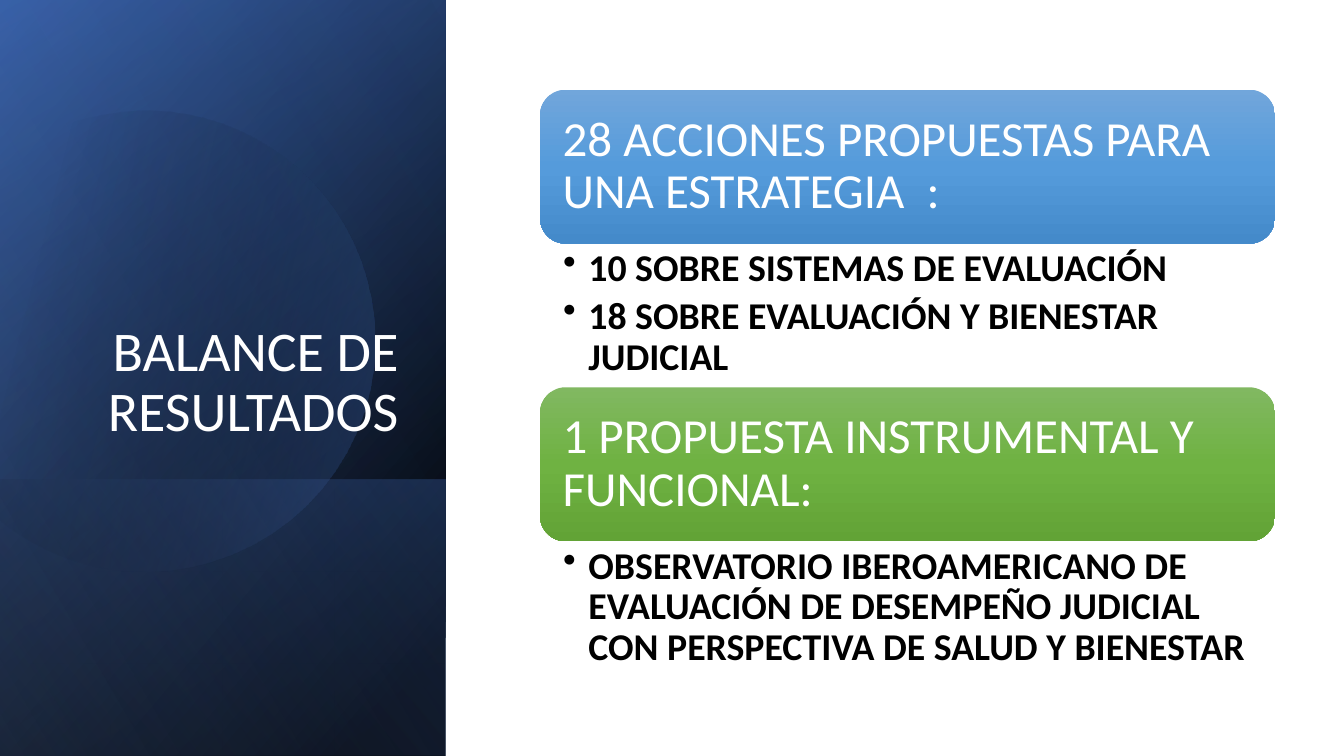
import math

import pptx
import pptx.dml.color
import pptx.enum.shapes
import pptx.enum.text
import pptx.util
from lxml import etree
from pptx.oxml.ns import qn
from pptx.util import Cm, Pt

COLORS = {
    "black": "000000", "white": "FFFFFF", "navy": "2F5597", "blue": "4472C4", "pale": "8FAADC",
    "sky_top": "71A6DB", "sky_mid": "559BDB", "sky_low": "448ACA",
    "green_top": "81B861", "green_mid": "6FB242", "green_low": "62A336",
}
SHAPES = pptx.enum.shapes.MSO_SHAPE
ANCHOR = pptx.enum.text.MSO_ANCHOR
ALIGN = pptx.enum.text.PP_ALIGN


def paint(s, angle, stops):
    """Fill with a linear gradient; each stop is (position %, colour, opacity %)."""
    s.shadow.inherit = False
    s.line.fill.background()
    s.fill.gradient()
    grad = s._element.spPr.find(qn("a:gradFill"))
    stop_list = grad.find(qn("a:gsLst"))
    stop_list.clear()
    for position, color, opacity in stops:
        gs = etree.SubElement(stop_list, qn("a:gs"), pos=str(position * 1000))
        rgb = etree.SubElement(gs, qn("a:srgbClr"), val=COLORS[color])
        if opacity < 100:
            etree.SubElement(rgb, qn("a:alpha"), val=str(opacity * 1000))
    grad.find(qn("a:lin")).set("ang", str(angle * 60000))


def write(s, texts, size, color, margins, anchor, bold=False, align=ALIGN.LEFT, bullet=False):
    tf = s.text_frame
    frame = {"word_wrap": True, "vertical_anchor": anchor}
    frame.update(zip(("margin_left", "margin_top", "margin_right", "margin_bottom"), map(Cm, margins)))
    for name, value in frame.items():
        setattr(tf, name, value)
    for i, text in enumerate(texts):
        p = tf.add_paragraph() if i else tf.paragraphs[0]
        p.alignment, p.line_spacing = align, 0.9
        r = p.add_run()
        r.text = text
        for name, value in {"name": "Calibri", "size": Pt(size), "bold": bold}.items():
            setattr(r.font, name, value)
        r.font.color.rgb = pptx.dml.color.RGBColor.from_string(COLORS[color])
        if bullet:
            p.space_after = Pt(5)
            pPr = p._p.get_or_add_pPr()
            pPr.set("marL", str(Cm(0.64)))
            pPr.set("indent", str(-Cm(0.64)))
            etree.SubElement(pPr, qn("a:buChar"), char="•")


prs = pptx.Presentation()
prs.slide_width, prs.slide_height = Cm(33.87), Cm(19.05)
sp = prs.slides.add_slide(prs.slide_layouts[6]).shapes

# Left panel: turned and mirrored gradient layers, all standing on the bottom edge
PANEL_W, PANEL_H = 11.23, 19.05
layers = [
    (PANEL_H, 50, [(8, "black", 100), (100, "navy", 100)]),
    (PANEL_H, 30, [(0, "black", 0), (99, "blue", 46)]),
    (6.96, 130, [(2, "blue", 29), (100, "black", 30)]),
    "disc",
    (PANEL_H, 120, [(0, "black", 0), (99, "pale", 11)]),
]

# Disc outline: a start point, then lines (one point) and Bézier curves (three points)
DISC_TURN = 343.9
DISC_CENTER = (4.03, 8.5)
disc_start = (3.78, 2.79)
disc_segments = [
    [(6.25, 2.84), (8.51, 4.5), (9.22, 6.99)],
    [(10.11, 10.08), (8.33, 13.28), (5.26, 14.17)],
    [(3.33, 14.73), (1.35, 14.25), (-0.08, 13.06)],
    [(-0.38, 12.78)],
    [(-0.38, 4.45)],
    [(0, 4.09)],
    [(0.58, 3.61), (1.27, 3.23), (2.03, 3.02)],
    [(2.62, 2.87), (3.2, 2.79), (3.78, 2.79)],
]
STEPS = 16
outline = [disc_start]
for segment in disc_segments:
    if len(segment) == 1:
        outline += segment
        continue
    curve = [outline[-1]] + segment
    for step in range(1, STEPS + 1):
        t = step / STEPS
        weights = [math.comb(3, k) * t**k * (1 - t) ** (3 - k) for k in range(4)]
        outline.append(tuple(sum(w * pt[axis] for w, pt in zip(weights, curve)) for axis in (0, 1)))

# The outline is turned back so that the shape's rotation also turns its gradient
cos, sin = math.cos(math.radians(-DISC_TURN)), math.sin(math.radians(-DISC_TURN))
cx, cy = DISC_CENTER
turned = [(Cm(cx + (x - cx) * cos - (y - cy) * sin), Cm(cy + (x - cx) * sin + (y - cy) * cos))
          for x, y in outline]

for layer in layers:
    if layer == "disc":
        builder = sp.build_freeform(*turned[0])
        builder.add_line_segments(turned[1:], close=True)
        disc = builder.convert_to_shape()
        disc.rotation = DISC_TURN
        paint(disc, 30, [(29, "black", 0), (100, "blue", 43)])
        continue
    height, angle, stops = layer
    left = (PANEL_W - height) / 2
    top = PANEL_H - (height + PANEL_W) / 2
    s = sp.add_shape(SHAPES.RECTANGLE, Cm(left), Cm(top), Cm(height), Cm(PANEL_W))
    s.rotation = 90
    s._element.spPr.find(qn("a:xfrm")).set("flipH", "1")
    paint(s, angle, stops)

title = sp.add_textbox(Cm(1.63), Cm(4.67), Cm(8.66), Cm(6.65))
write(title, ["BALANCE DE RESULTADOS"], 40, "white", (0.25, 0.13, 0.25, 0.13), ANCHOR.BOTTOM,
      align=ALIGN.RIGHT)

# Right side: two headed lists at an equal pitch
LIST_X, LIST_W, LIST_TOP, PITCH, HEAD_H = 13.61, 18.52, 2.26, 7.5, 3.88
results = [
    ("28 ACCIONES PROPUESTAS PARA UNA ESTRATEGIA  :", "sky",
     ["10 SOBRE SISTEMAS DE EVALUACIÓN", "18 SOBRE EVALUACIÓN Y BIENESTAR JUDICIAL"]),
    ("1 PROPUESTA INSTRUMENTAL Y FUNCIONAL:", "green",
     ["OBSERVATORIO IBEROAMERICANO DE EVALUACIÓN DE DESEMPEÑO JUDICIAL "
      "CON PERSPECTIVA DE SALUD Y BIENESTAR"]),
]
for i, (heading, hue, items) in enumerate(results):
    top = LIST_TOP + i * PITCH
    head = sp.add_shape(SHAPES.ROUNDED_RECTANGLE, Cm(LIST_X), Cm(top), Cm(LIST_W), Cm(HEAD_H))
    paint(head, 90, [(0, hue + "_top", 100), (50, hue + "_mid", 100), (100, hue + "_low", 100)])
    write(head, [heading], 35, "white", (0.38,) * 4, ANCHOR.MIDDLE)
    body = sp.add_textbox(Cm(LIST_X), Cm(top + HEAD_H), Cm(LIST_W), Cm(PITCH - HEAD_H))
    write(body, items, 27, "black", (0.58, 0.13, 0.69, 0.13), ANCHOR.TOP, bold=True, bullet=True)

prs.save("out.pptx")
